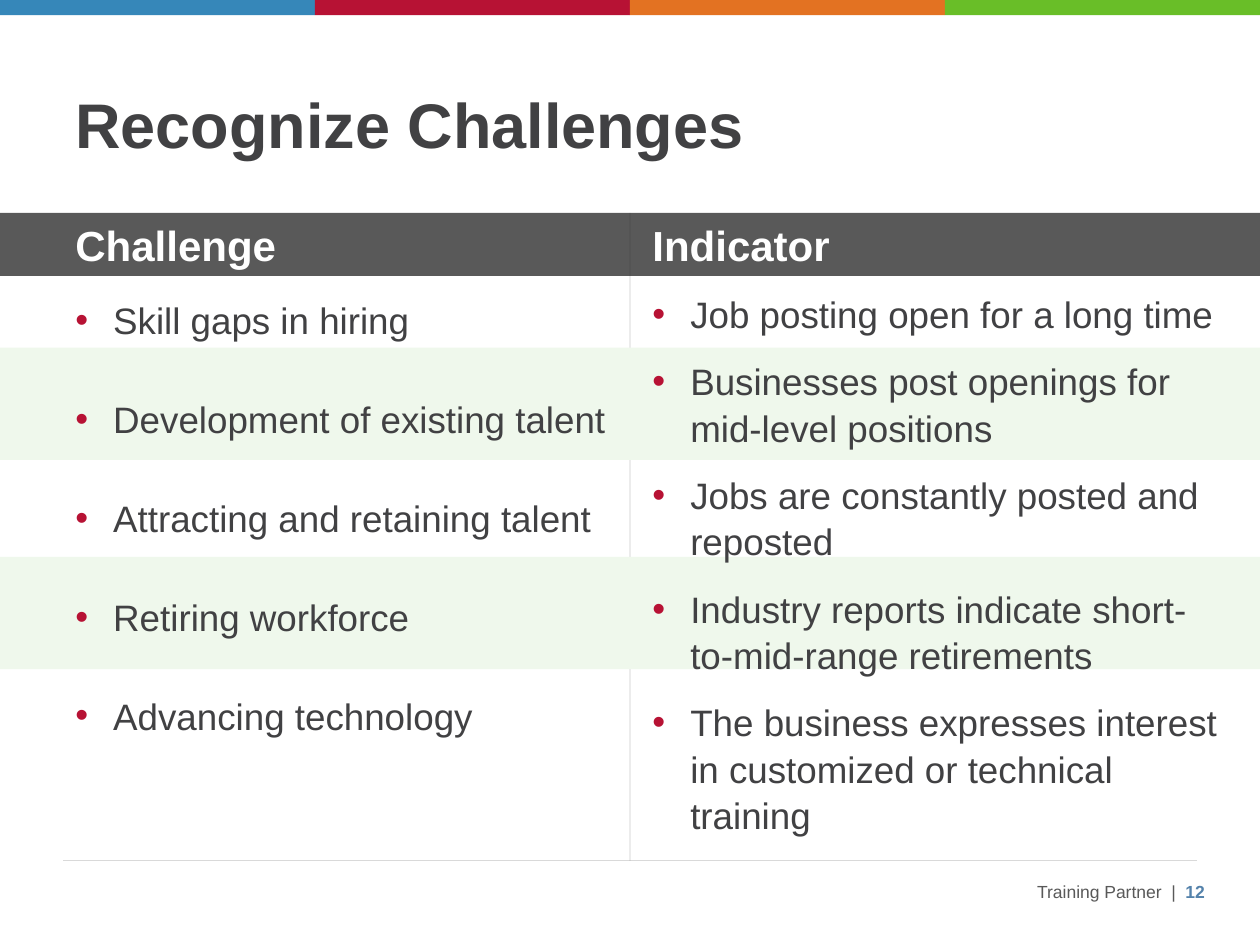
from lxml.etree import SubElement
from pptx import Presentation
from pptx.dml.color import RGBColor
from pptx.enum.shapes import MSO_CONNECTOR, MSO_SHAPE
from pptx.enum.text import MSO_ANCHOR, PP_ALIGN
from pptx.oxml.ns import qn
from pptx.util import Inches, Pt

BLUE = RGBColor(0x36, 0x87, 0xB9)
RED = RGBColor(0xB7, 0x12, 0x34)
ORANGE = RGBColor(0xE3, 0x72, 0x22)
GREEN = RGBColor(0x69, 0xBE, 0x28)
PALE_GREEN = RGBColor(0xEF, 0xF8, 0xEC)
GRAY = RGBColor(0x59, 0x59, 0x59)
LIGHT_GRAY = RGBColor(0xD9, 0xD9, 0xD9)
NEAR_BLACK = RGBColor(0x20, 0x20, 0x21)
TEXT_GRAY = RGBColor(0x41, 0x41, 0x43)
NUMBER_BLUE = RGBColor(0x54, 0x82, 0xAB)
WHITE = RGBColor(0xFF, 0xFF, 0xFF)

WIDTH, HEIGHT = 10, 7.5
MARGIN = WIDTH / 20
MIDDLE = WIDTH / 2
HEADER_TOP, FOOTER_TOP = 1.69, 6.83
ROW_PITCH = 0.83

presentation = Presentation()
presentation.slide_width, presentation.slide_height = Inches(WIDTH), Inches(HEIGHT)
slide = presentation.slides.add_slide(presentation.slide_layouts[6])


def add_text(box, paragraphs, size, color, bold=False, anchor=MSO_ANCHOR.TOP,
             align=PP_ALIGN.LEFT, line_spacing=1.0, before=0, after=0, bullet=None):
    """Add a text box; each paragraph is a string or a list of (text, color, bold) runs."""
    frame = slide.shapes.add_textbox(*map(Inches, box)).text_frame
    frame.word_wrap = True
    frame.vertical_anchor = anchor
    for index, content in enumerate(paragraphs):
        paragraph = frame.paragraphs[0] if index == 0 else frame.add_paragraph()
        paragraph.alignment = align
        paragraph.line_spacing = line_spacing
        paragraph.space_before, paragraph.space_after = Pt(before), Pt(after)
        if bullet:
            properties = paragraph._p.get_or_add_pPr()
            properties.set("marL", str(Inches(0.3)))
            properties.set("indent", str(-Inches(0.3)))
            bullet_color = SubElement(properties, qn("a:buClr"))
            SubElement(bullet_color, qn("a:srgbClr"), val=str(bullet))
            SubElement(properties, qn("a:buFont"), typeface="Arial")
            SubElement(properties, qn("a:buChar"), char="•")
        runs = [(content, color, bold)] if isinstance(content, str) else content
        for text, run_color, run_bold in runs:
            run = paragraph.add_run()
            run.text = text
            run.font.name, run.font.size = "Arial", Pt(size)
            run.font.bold, run.font.color.rgb = run_bold, run_color


def add_line(start, end, color, alpha=None):
    line = slide.shapes.add_connector(MSO_CONNECTOR.STRAIGHT, *map(Inches, start + end))
    line.line.color.rgb, line.line.width = color, Pt(0.75)
    SubElement(line._element.spPr, qn("a:effectLst"))
    if alpha:
        color_element = line._element.spPr.find(".//" + qn("a:srgbClr"))
        SubElement(color_element, qn("a:alpha"), val=str(alpha * 1000))


# Coloured strip, header band and striped rows, then the rules over them
strip = [(column * WIDTH / 4, 0, WIDTH / 4, 0.12, color)
         for column, color in enumerate([BLUE, RED, ORANGE, GREEN])]
header = [(0, HEADER_TOP, WIDTH, 0.5, GRAY)]
stripes = [(0, 2.76 + 2 * row * ROW_PITCH, WIDTH, 0.89, PALE_GREEN) for row in range(2)]


for group in (strip + header, stripes):
    for *box, color in group:
        band = slide.shapes.add_shape(MSO_SHAPE.RECTANGLE, *map(Inches, box))
        band.shadow.inherit = False
        band.fill.solid()
        band.fill.fore_color.rgb = color
        band.line.fill.background()
    # The first pass ends with the column divider, so the stripes cover it
    if group is not stripes:
        add_line((MARGIN, FOOTER_TOP), (WIDTH - MARGIN, FOOTER_TOP), LIGHT_GRAY)
        add_line((MIDDLE, HEADER_TOP), (MIDDLE, FOOTER_TOP), NEAR_BLACK, alpha=13)

# Title and footer
add_text((MARGIN, 0.39, WIDTH - 2 * MARGIN, 1.25), ["Recognize Challenges"], 36, TEXT_GRAY,
         bold=True, anchor=MSO_ANCHOR.MIDDLE, line_spacing=0.9)
add_text((6.08, 6.91, 3.58, 0.3),
         [[("Training Partner  |  ", GRAY, False), ("12", NUMBER_BLUE, True)]],
         10, GRAY, anchor=MSO_ANCHOR.BOTTOM, align=PP_ALIGN.RIGHT)

# Two columns: heading, left, list top, list width, space before and after, items
columns = [
    ("Challenge", MARGIN, 2.3, 4.42, 12, 18, [
        "Skill gaps in hiring",
        "Development of existing talent",
        "Attracting and retaining talent",
        "Retiring workforce",
        "Advancing technology",
    ]),
    ("Indicator", 5.08, 2.25, 4.75, 6, 6, [
        "Job posting open for a long time",
        "Businesses post openings for mid-level positions",
        "Jobs are constantly posted and reposted",
        "Industry reports indicate short-to-mid-range retirements",
        "The business expresses interest in customized or technical training",
    ]),
]
for heading, left, top, width, before, after, items in columns:
    add_text((left, 1.72, 4.42, 0.45), [heading], 24, WHITE, bold=True, line_spacing=0.95)
    add_text((left, top, width, 4.45), items, 21, TEXT_GRAY, line_spacing=1.05,
             before=before, after=after, bullet=RED)

presentation.save("out.pptx")
